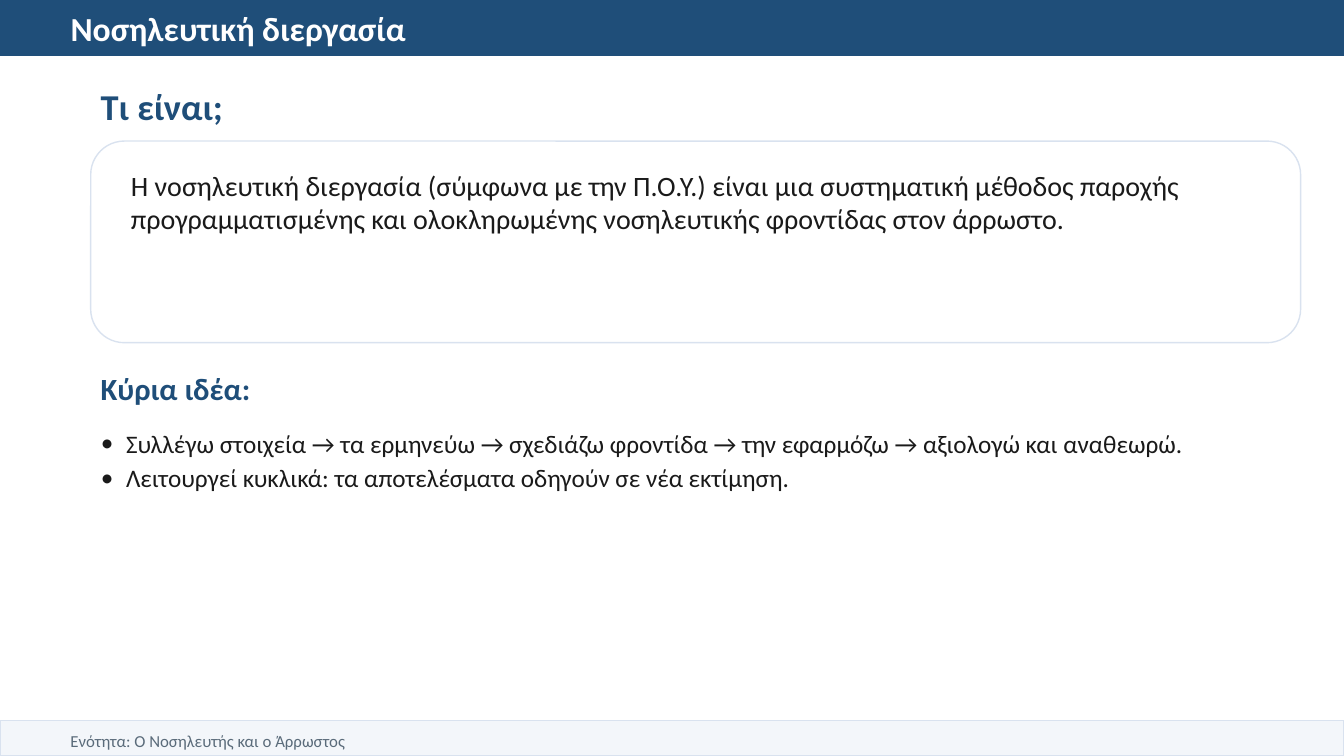
from lxml import etree
from pptx import Presentation
from pptx.dml.color import RGBColor
from pptx.enum.shapes import MSO_SHAPE as Shape
from pptx.enum.text import MSO_ANCHOR as Anchor, MSO_AUTO_SIZE as Fit, PP_ALIGN as Align
from pptx.oxml.ns import qn
from pptx.util import Inches, Pt

NAVY, INK, EDGE = "1F4E79", "1A1A1A", "D9E2EF"
WIDE = 13.33


def color(code):
    return RGBColor.from_string(code)


def place(shape, left, top, width, height):
    shape.left, shape.top = Inches(left), Inches(top)
    shape.width, shape.height = Inches(width), Inches(height)


def panel(slide, kind, box, fill, line):
    shape = slide.shapes.add_shape(kind, *map(Inches, box))
    shape.shadow.inherit = False
    shape.fill.solid()
    shape.fill.fore_color.rgb = color(fill)
    shape.line.color.rgb = color(line)
    shape.line.width = Pt(1)


def write(shape, text, size, tint, bold=False, anchor=Anchor.MIDDLE):
    frame = shape.text_frame
    frame.text = text
    frame.word_wrap = True
    frame.auto_size = Fit.NONE
    frame.vertical_anchor = anchor
    for para in frame.paragraphs:
        para.alignment = Align.LEFT
        para.space_before = Pt(0)
        for run in para.runs:
            font = run.font
            font.name, font.size, font.bold = "Calibri", Pt(size), bold
            font.color.rgb = color(tint)


def label(slide, box, *args, **style):
    write(slide.shapes.add_textbox(*map(Inches, box)), *args, **style)


def holder(slide, shape, box, *args, **style):
    slide.shapes.element.append(shape.element)  # bring to front
    place(shape, *box)
    write(shape, *args, **style)


def bullets(shape):
    for para in shape.text_frame.paragraphs:
        para.line_spacing = 1.15
        props = para._p.get_or_add_pPr()
        props.set("marL", str(Inches(0.25)))
        props.set("indent", str(-Inches(0.25)))
        etree.SubElement(props, qn("a:buFont")).set("typeface", "Calibri")
        etree.SubElement(props, qn("a:buChar")).set("char", "•")


def main():
    deck = Presentation()
    deck.slide_width, deck.slide_height = Inches(WIDE), Inches(7.5)
    slide = deck.slides.add_slide(deck.slide_layouts[1])
    title, body = slide.placeholders

    # Title bar
    panel(slide, Shape.RECTANGLE, (0, 0, WIDE, 0.55), NAVY, NAVY)
    holder(slide, title, (0.6, 0.08, 12.13, 0.4),
           "Νοσηλευτική διεργασία", 24, "FFFFFF", bold=True)

    # Definition card
    label(slide, (0.9, 0.85, 12, 0.4), "Τι είναι;", 26, NAVY, bold=True)
    panel(slide, Shape.ROUNDED_RECTANGLE, (0.9, 1.4, 12, 2), "FFFFFF", EDGE)
    label(slide, (1.2, 1.62, 11.4, 1.6),
          "Η νοσηλευτική διεργασία (σύμφωνα με την Π.Ο.Υ.) είναι μια "
          "συστηματική μέθοδος παροχής προγραμματισμένης και ολοκληρωμένης "
          "νοσηλευτικής φροντίδας στον άρρωστο.", 20, INK, anchor=Anchor.TOP)

    # Main idea
    label(slide, (0.9, 3.65, 12, 0.4), "Κύρια ιδέα:", 22, NAVY, bold=True)
    holder(slide, body, (0.9, 4.15, 12, 2.6),
           "Συλλέγω στοιχεία → τα ερμηνεύω → σχεδιάζω φροντίδα → "
           "την εφαρμόζω → αξιολογώ και αναθεωρώ.\n"
           "Λειτουργεί κυκλικά: τα αποτελέσματα οδηγούν σε νέα εκτίμηση.",
           18, INK, anchor=Anchor.TOP)
    bullets(body)

    # Footer
    panel(slide, Shape.RECTANGLE, (0, 7.15, WIDE, 0.35), "F3F6FA", EDGE)
    label(slide, (0.6, 7.22, 12.13, 0.25),
          "Ενότητα: Ο Νοσηλευτής και ο Άρρωστος", 12, "5A6B7A")

    deck.save("out.pptx")


if __name__ == "__main__":
    main()
